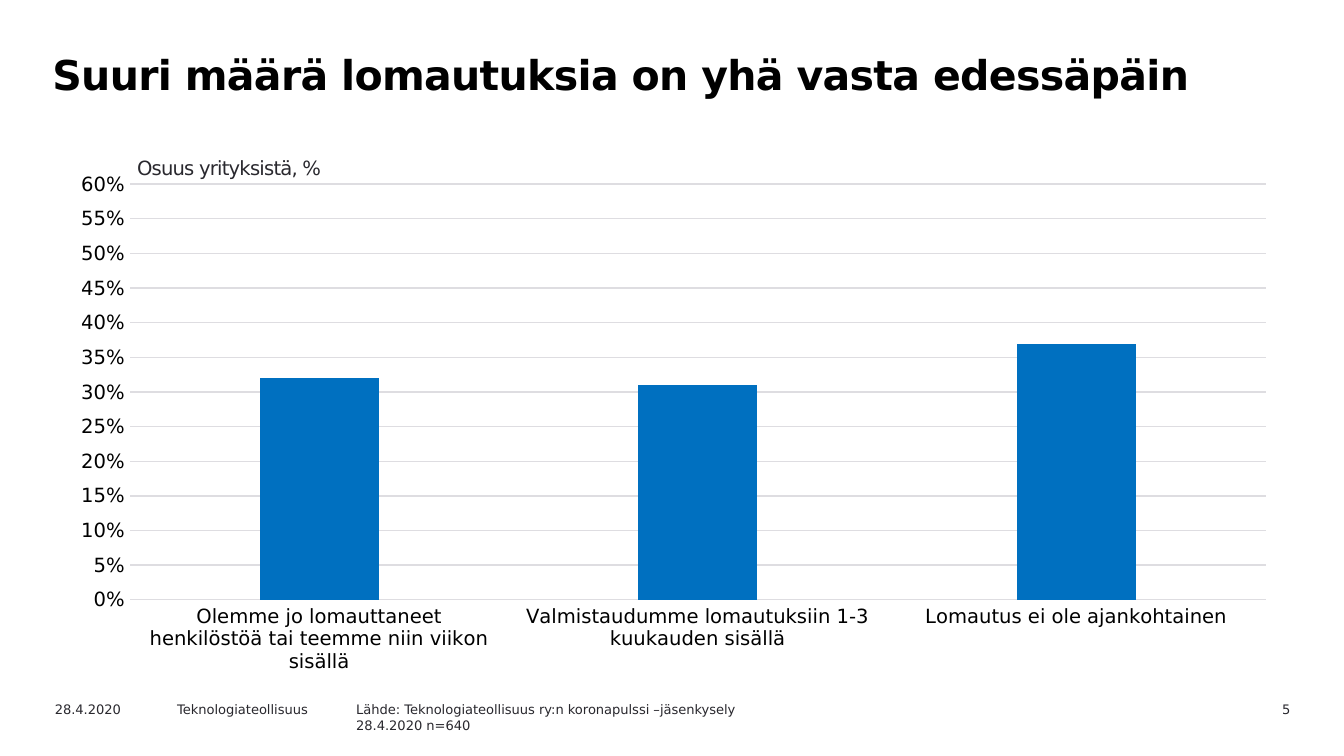
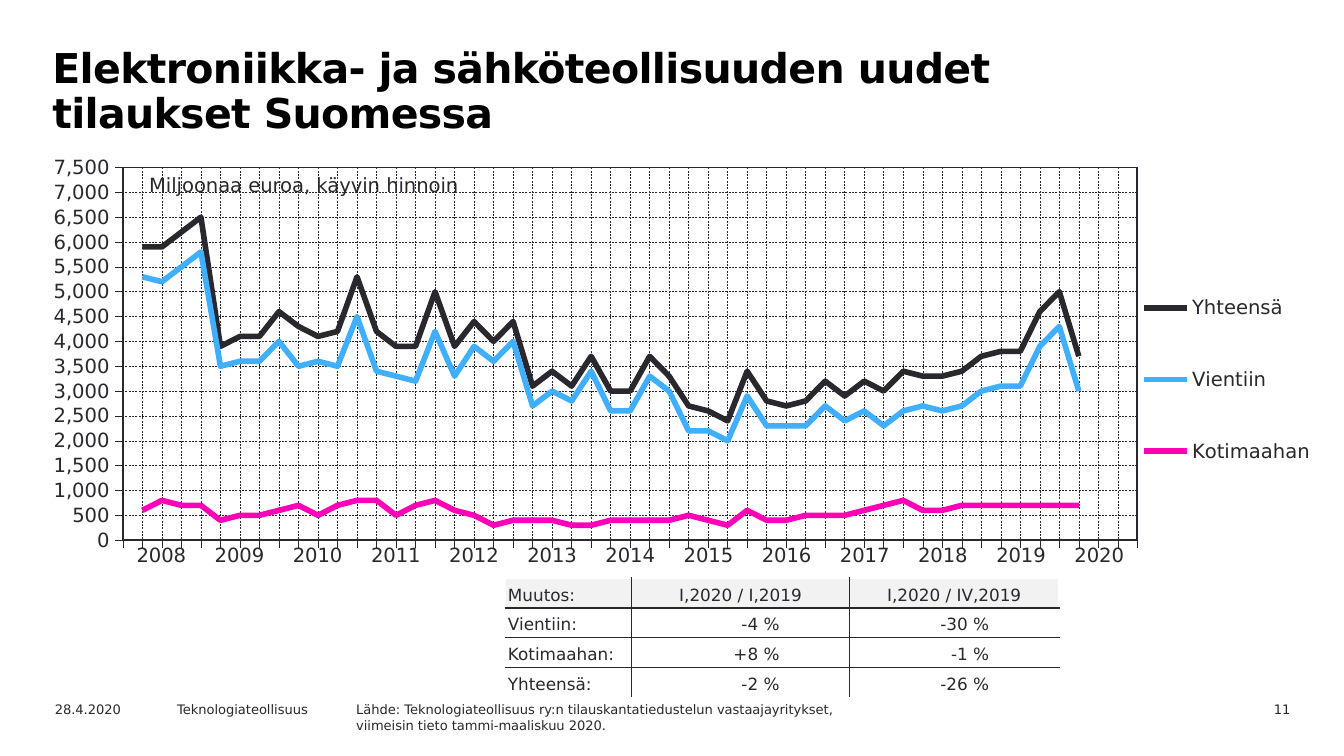
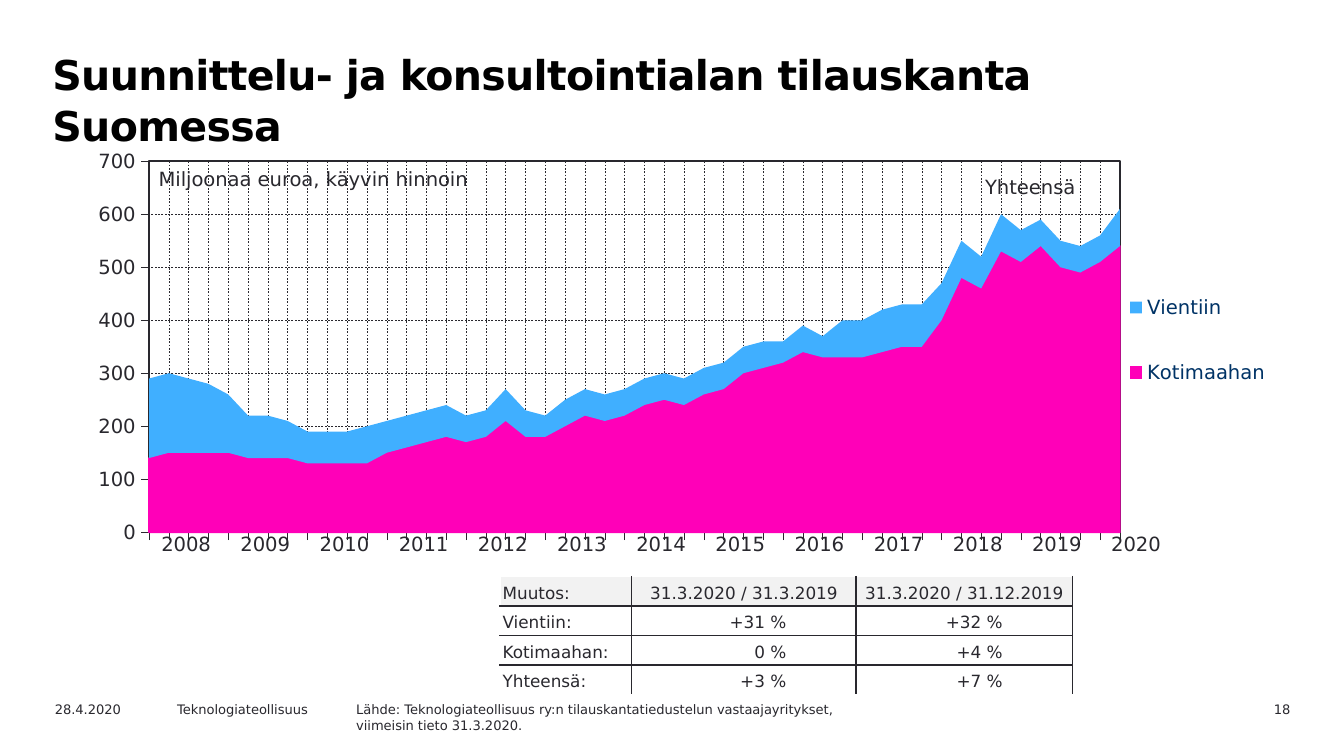
from collections import namedtuple
from dataclasses import dataclass

from pptx import Presentation
from pptx.chart.data import CategoryChartData
from pptx.dml.color import RGBColor
from pptx.enum.chart import (XL_CHART_TYPE, XL_LEGEND_POSITION, XL_TICK_LABEL_POSITION,
                             XL_TICK_MARK)
from pptx.enum.dml import MSO_LINE
from pptx.enum.text import MSO_ANCHOR, MSO_AUTO_SIZE, PP_ALIGN
from pptx.oxml import parse_xml
from pptx.oxml.ns import nsdecls, qn
from pptx.util import Inches, Pt

Box = namedtuple("Box", "left top width height")


@dataclass(frozen=True)
class Theme:
    font: str = "DejaVu Sans"
    title: str = "000000"
    ink: str = "29282E"
    white: str = "FFFFFF"
    header: str = "F2F2F2"
    grid: str = "DEDDE1"
    bar: str = "0070C0"
    export: str = "40AFFF"
    domestic: str = "FF00B8"
    legend_navy: str = "003366"
    title_size: float = 22
    label_size: float = 10.5
    table_size: float = 9
    footer_size: float = 7


THEME = Theme()
NO_GRID_STYLE = "{2D5ABB26-0587-4C30-8999-92F81FD0307C}"
DATE, PUBLISHER = "28.4.2020", "Teknologiateollisuus"
UNIT = "Miljoonaa euroa, käyvin hinnoin"
YEARS = [str(year) for year in range(2008, 2021)]
TOTAL, EXPORT, DOMESTIC = "Yhteensä", "Vientiin", "Kotimaahan"


# Shared helpers
def apply(target, **values):
    for name, value in values.items():
        setattr(target, name, value)


def inside(box, left, top, width, height):
    return Box(box.left + left, box.top + top, width, height)


def inches(box):
    return [Inches(value) for value in box]


def style_font(font, size, color=THEME.ink, bold=False):
    apply(font, name=THEME.font, size=Pt(size), bold=bold)
    font.color.rgb = RGBColor.from_string(color)


def style_line(line, color, width, dash=None):
    line.color.rgb = RGBColor.from_string(color)
    line.width = Pt(width)
    if dash:
        line.dash_style = dash


def margins(horizontal, top, bottom, right=None):
    right = horizontal if right is None else right
    return dict(margin_left=Inches(horizontal), margin_right=Inches(right),
                margin_top=Inches(top), margin_bottom=Inches(bottom))


def write(shape, lines, size, color=THEME.ink, bold=False, align=PP_ALIGN.LEFT,
          spacing=1.0, tracking=0, inset=(0.1, 0.05, 0.05)):
    frame = shape.text_frame
    frame.text = "\n".join(lines)
    apply(frame, word_wrap=True, auto_size=MSO_AUTO_SIZE.NONE,
          vertical_anchor=MSO_ANCHOR.TOP, **margins(*inset))
    for paragraph in frame.paragraphs:
        apply(paragraph, alignment=align, line_spacing=spacing,
              space_before=Pt(0), space_after=Pt(0))
        for run in paragraph.runs:
            style_font(run.font, size, color, bold)
            if tracking:
                run.font._element.set("spc", str(int(tracking * 100)))


def add_label(slide, box, text, size=THEME.label_size, **style):
    write(slide.shapes.add_textbox(*inches(box)), [text], size, **style)


def place(shape, box):
    apply(shape, **dict(zip(Box._fields, inches(box))))


# Title, source note and footer
def start_slide(prs, title, title_spacing, page, source, source_box):
    slide = prs.slides.add_slide(prs.slide_layouts[1])
    place(slide.shapes.title, Box(0.28, 0.31, 8.74, 0.8))
    write(slide.shapes.title, [title], THEME.title_size, THEME.title, True,
          spacing=title_spacing, tracking=-0.35, inset=(0.11, 0.05, 0.05))

    note = slide.placeholders[1]
    place(note, source_box)
    write(note, source, THEME.footer_size)
    for paragraph in note.text_frame.paragraphs:
        properties = paragraph._p.get_or_add_pPr()
        properties.set("marL", "0")
        properties.set("indent", "0")
        properties.append(parse_xml(f"<a:buNone {nsdecls('a')}/>"))

    for left, width, text, align in [(0.31, 1, DATE, PP_ALIGN.LEFT),
                                     (1.22, 1.42, PUBLISHER, PP_ALIGN.LEFT),
                                     (8.76, 0.94, str(page), PP_ALIGN.RIGHT)]:
        add_label(slide, Box(left, 5.17, width, 0.18), text, THEME.footer_size, align=align)
    return slide


# Charts
def add_chart(slide, box, kind, categories, series):
    data = CategoryChartData()
    data.categories = categories
    for name, values in series:
        data.add_series(name, values)
    chart = slide.shapes.add_chart(kind, *inches(box), data).chart
    apply(chart, has_title=False, has_legend=False)
    style_font(chart.font, THEME.label_size)
    chart.plots[0].vary_by_categories = False
    return chart


def style_value_axis(axis, number_format, top, step, tick, color=THEME.ink):
    apply(axis, minimum_scale=0, maximum_scale=top, major_unit=step,
          major_tick_mark=tick, has_major_gridlines=True)
    apply(axis.tick_labels, number_format=number_format, number_format_is_linked=False)
    style_font(axis.tick_labels.font, THEME.label_size, color)


def set_layout(parent, index, box, target=""):
    old = parent.find(qn("c:layout"))
    if old is not None:
        parent.remove(old)
    modes = '<c:xMode val="edge"/><c:yMode val="edge"/>'
    sizes = "".join(f'<c:{tag} val="{value}"/>' for tag, value in zip("xywh", box))
    parent.insert(index, parse_xml(
        f"<c:layout {nsdecls('c')}><c:manualLayout>{target}{modes}{sizes}"
        "</c:manualLayout></c:layout>"))


def frame_plot(chart, plot_box):
    plot_area = chart._chartSpace.chart.plotArea
    set_layout(plot_area, 0, plot_box, '<c:layoutTarget val="inner"/>')
    plot_area.append(parse_xml(
        f'<c:spPr {nsdecls("c", "a")}><a:noFill/><a:ln w="{Pt(1)}"><a:solidFill>'
        f'<a:srgbClr val="{THEME.ink}"/></a:solidFill></a:ln></c:spPr>'))


def start_at_axis(chart):
    """Put the first point on the value axis."""
    axis = chart.value_axis._element
    cross = axis.find(qn("c:crossBetween"))
    if cross is None:
        cross = parse_xml(f"<c:crossBetween {nsdecls('c')}/>")
        axis.find(qn("c:crosses")).addnext(cross)
    cross.set("val", "midCat")


def add_quarter_chart(slide, box, kind, series, top, step, plot_box, legend_box,
                      legend_color):
    count = len(series[0][1])
    chart = add_chart(slide, box, kind, [str(n + 1) for n in range(count)], series)
    style_value_axis(chart.value_axis, "#,##0", top, step, XL_TICK_MARK.OUTSIDE)
    apply(chart.category_axis, has_major_gridlines=True,
          major_tick_mark=XL_TICK_MARK.OUTSIDE,
          tick_label_position=XL_TICK_LABEL_POSITION.NONE)
    for axis in (chart.value_axis, chart.category_axis):
        style_line(axis.format.line, THEME.ink, 0.22)
        style_line(axis.major_gridlines.format.line, THEME.ink, 0.25, MSO_LINE.DASH)
    start_at_axis(chart)
    frame_plot(chart, plot_box)

    chart.has_legend = True
    apply(chart.legend, position=XL_LEGEND_POSITION.RIGHT, include_in_layout=False)
    style_font(chart.legend.font, THEME.label_size, legend_color)
    set_layout(chart.legend._element, 1, legend_box)
    return chart


# Tables
def add_plain_table(slide, box, rows, widths):
    table = slide.shapes.add_table(len(rows), len(widths), *inches(box)).table
    apply(table, first_row=False, horz_banding=False)
    table._tbl.tblPr.find(qn("a:tableStyleId")).text = NO_GRID_STYLE
    for column, width in zip(table.columns, widths):
        column.width = Inches(width)
    for row in table.rows:
        row.height = Inches(box.height / len(rows))
    for r, row in enumerate(rows):
        for c, text in enumerate(row):
            table.cell(r, c).text = text
    return table


def style_cell(cell, size, align, anchor, **cell_margins):
    apply(cell, vertical_anchor=anchor, **cell_margins)
    paragraph = cell.text_frame.paragraphs[0]
    paragraph.alignment = align
    style_font(paragraph.runs[0].font, size)


def set_borders(cell, colors):
    properties = cell._tc.get_or_add_tcPr()
    for index, (side, color) in enumerate(zip("LRTB", colors)):
        properties.insert(index, parse_xml(
            f'<a:ln{side} {nsdecls("a")} w="{Pt(1)}"><a:solidFill>'
            f'<a:srgbClr val="{color}"/></a:solidFill></a:ln{side}>'))


def add_year_row(slide, box):
    table = add_plain_table(slide, box, [YEARS], [box.width / len(YEARS)] * len(YEARS))
    for cell in table.iter_cells():
        style_cell(cell, THEME.label_size, PP_ALIGN.CENTER, MSO_ANCHOR.TOP,
                   **margins(0.05, 0.05, 0.05))
        cell.fill.background()


def add_change_table(slide, box, periods, changes, widths, right_edge):
    names = [EXPORT, DOMESTIC, TOTAL]
    rows = [["Muutos:", *periods]]
    rows += [[f"{name}:", *change] for name, change in zip(names, changes)]
    table = add_plain_table(slide, box, rows, widths)
    last_row, last_column = len(rows) - 1, len(widths) - 1
    for r in range(len(rows)):
        for c in range(len(widths)):
            cell, is_value = table.cell(r, c), r > 0 and c > 0
            align = (PP_ALIGN.LEFT if c == 0 else
                     PP_ALIGN.RIGHT if is_value else PP_ALIGN.CENTER)
            style_cell(cell, THEME.table_size, align, MSO_ANCHOR.BOTTOM,
                       **margins(0.02, 0.02, 0.02, 0.52 if is_value else 0.02))
            cell.fill.solid()
            cell.fill.fore_color.rgb = RGBColor.from_string(
                THEME.white if r else THEME.header)
            set_borders(cell, [THEME.ink if c else THEME.white,
                               right_edge if c == last_column else THEME.ink,
                               THEME.ink if r else THEME.white,
                               THEME.white if r == last_row else THEME.ink])


# Slides
def layoff_slide(prs, box):
    slide = start_slide(prs, "Suuri määrä lomautuksia on yhä vasta edessäpäin", Pt(27), 5,
                        ["Lähde: Teknologiateollisuus ry:n koronapulssi –jäsenkysely",
                         "28.4.2020 n=640"], Box(2.55, 5.17, 3.25, 0.18))
    answers = ["Olemme jo lomauttaneet henkilöstöä tai teemme niin viikon sisällä",
               "Valmistaudumme lomautuksiin 1-3 kuukauden sisällä",
               "Lomautus ei ole ajankohtainen"]
    chart = add_chart(slide, box, XL_CHART_TYPE.COLUMN_CLUSTERED, answers,
                      [("Series 1", [0.32, 0.31, 0.37])])
    apply(chart.plots[0], gap_width=219, overlap=-27)
    fill = chart.series[0].format.fill
    fill.solid()
    fill.fore_color.rgb = RGBColor.from_string(THEME.bar)

    style_value_axis(chart.value_axis, "0%", 0.6, 0.05, XL_TICK_MARK.NONE, THEME.title)
    chart.value_axis.format.line.fill.background()
    style_line(chart.value_axis.major_gridlines.format.line, THEME.grid, 0.75)
    chart.category_axis.major_tick_mark = XL_TICK_MARK.NONE
    style_line(chart.category_axis.format.line, THEME.grid, 0.75)
    style_font(chart.category_axis.tick_labels.font, THEME.label_size, THEME.title)

    add_label(slide, inside(box, 0.56, -0.09, 3.39, 0.26), "Osuus yrityksistä, %",
              tracking=-0.4, inset=(0.04, 0.04, 0.04))


def new_orders_slide(prs, box):
    slide = start_slide(
        prs, "Elektroniikka- ja sähköteollisuuden uudet tilaukset Suomessa", 0.9, 11,
        ["Lähde: Teknologiateollisuus ry:n tilauskantatiedustelun vastaajayritykset,",
         "viimeisin tieto tammi-maaliskuu 2020."], Box(2.55, 5.17, 5.07, 0.18))
    total = [5900, 5900, 6200, 6500, 3900, 4100, 4100, 4600, 4300, 4100, 4200, 5300, 4200,
             3900, 3900, 5000, 3900, 4400, 4000, 4400, 3100, 3400, 3100, 3700, 3000, 3000,
             3700, 3300, 2700, 2600, 2400, 3400, 2800, 2700, 2800, 3200, 2900, 3200, 3000,
             3400, 3300, 3300, 3400, 3700, 3800, 3800, 4600, 5000, 3700]
    export = [5300, 5200, 5500, 5800, 3500, 3600, 3600, 4000, 3500, 3600, 3500, 4500, 3400,
              3300, 3200, 4200, 3300, 3900, 3600, 4000, 2700, 3000, 2800, 3400, 2600, 2600,
              3300, 3000, 2200, 2200, 2000, 2900, 2300, 2300, 2300, 2700, 2400, 2600, 2300,
              2600, 2700, 2600, 2700, 3000, 3100, 3100, 3900, 4300, 3000]
    domestic = [600, 800, 700, 700, 400, 500, 500, 600, 700, 500, 700, 800, 800, 500, 700,
                800, 600, 500, 300, 400, 400, 400, 300, 300, 400, 400, 400, 400, 500, 400,
                300, 600, 400, 400, 500, 500, 500, 600, 700, 800, 600, 600, 700, 700, 700,
                700, 700, 700, 700]
    # The axis runs one quarter before and three after the data
    series = [(name, [None, *values, None, None, None]) for name, values in
              [(TOTAL, total), (EXPORT, export), (DOMESTIC, domestic)]]
    chart = add_quarter_chart(slide, box, XL_CHART_TYPE.LINE, series, 7500, 500,
                              Box(0.082, 0.041, 0.779, 0.833), Box(0.86, 0.22, 0.14, 0.59),
                              THEME.ink)
    for line, color in zip(chart.series, [THEME.ink, THEME.export, THEME.domestic]):
        line.smooth = False
        style_line(line.format.line, color, 3)

    add_label(slide, inside(box, 0.9, 0.14, 2.6, 0.27), UNIT, inset=(0.09, 0.04, 0.05))
    add_change_table(slide, Box(3.76, 4.3, 4.12, 0.89),
                     ["I,2020 / I,2019", "I,2020 / IV,2019"],
                     [("-4 %", "-30 %"), ("+8 %", "-1 %"), ("-2 %", "-26 %")],
                     [0.94, 1.62, 1.56], THEME.white)
    add_year_row(slide, inside(box, 0.79, 2.89, 7.56, 0.31))


def order_book_slide(prs, box):
    slide = start_slide(
        prs, "Suunnittelu- ja konsultointialan tilauskanta Suomessa", Pt(27), 18,
        ["Lähde: Teknologiateollisuus ry:n tilauskantatiedustelun vastaajayritykset,",
         "viimeisin tieto 31.3.2020."], Box(2.55, 5.17, 5, 0.26))
    domestic = [140, 150, 150, 150, 150, 140, 140, 140, 130, 130, 130, 130, 150, 160, 170,
                180, 170, 180, 210, 180, 180, 200, 220, 210, 220, 240, 250, 240, 260, 270,
                300, 310, 320, 340, 330, 330, 330, 340, 350, 350, 400, 480, 460, 530, 510,
                540, 500, 490, 510, 540]
    export = [150, 150, 140, 130, 110, 80, 80, 70, 60, 60, 60, 70, 60, 60, 60, 60, 50, 50,
              60, 50, 40, 50, 50, 50, 50, 50, 50, 50, 50, 50, 50, 50, 40, 50, 40, 70, 70,
              80, 80, 80, 70, 70, 60, 70, 60, 50, 50, 50, 50, 70]
    chart = add_quarter_chart(slide, box, XL_CHART_TYPE.AREA_STACKED,
                              [(DOMESTIC, domestic), (EXPORT, export)], 700, 100,
                              Box(0.075, 0.029, 0.787, 0.885), Box(0.86, 0.25, 0.13, 0.41),
                              THEME.legend_navy)
    domestic_area, export_area = chart.series
    for area, color in [(domestic_area, THEME.domestic), (export_area, THEME.export)]:
        area.format.fill.solid()
        area.format.fill.fore_color.rgb = RGBColor.from_string(color)
    style_line(domestic_area.format.line, THEME.domestic, 0.88)
    export_area.format.line.fill.background()

    add_label(slide, inside(box, 0.67, 0.09, 2.6, 0.27), UNIT, inset=(0.09, 0.04, 0.05))
    add_change_table(slide, Box(3.72, 4.29, 4.26, 0.88),
                     ["31.3.2020 / 31.3.2019", "31.3.2020 / 31.12.2019"],
                     [("+31 %", "+32 %"), ("0 %", "+4 %"), ("+3 %", "+7 %")],
                     [0.98, 1.67, 1.61], THEME.ink)
    add_label(slide, inside(box, 6.82, 0.15, 1.06, 0.27), TOTAL, inset=(0.09, 0.04, 0.04))
    add_year_row(slide, inside(box, 0.67, 2.81, 7.66, 0.31))


def main():
    prs = Presentation()
    # Widescreen 16:9
    apply(prs, slide_width=Inches(10), slide_height=Inches(10 * 9 / 16))
    layoff_slide(prs, Box(0.42, 1.21, 9.18, 3.87))
    new_orders_slide(prs, Box(0.12, 1.11, 9.69, 3.33))
    order_book_slide(prs, Box(0.42, 1.11, 9.18, 3.12))
    prs.save("out.pptx")


if __name__ == "__main__":
    main()
